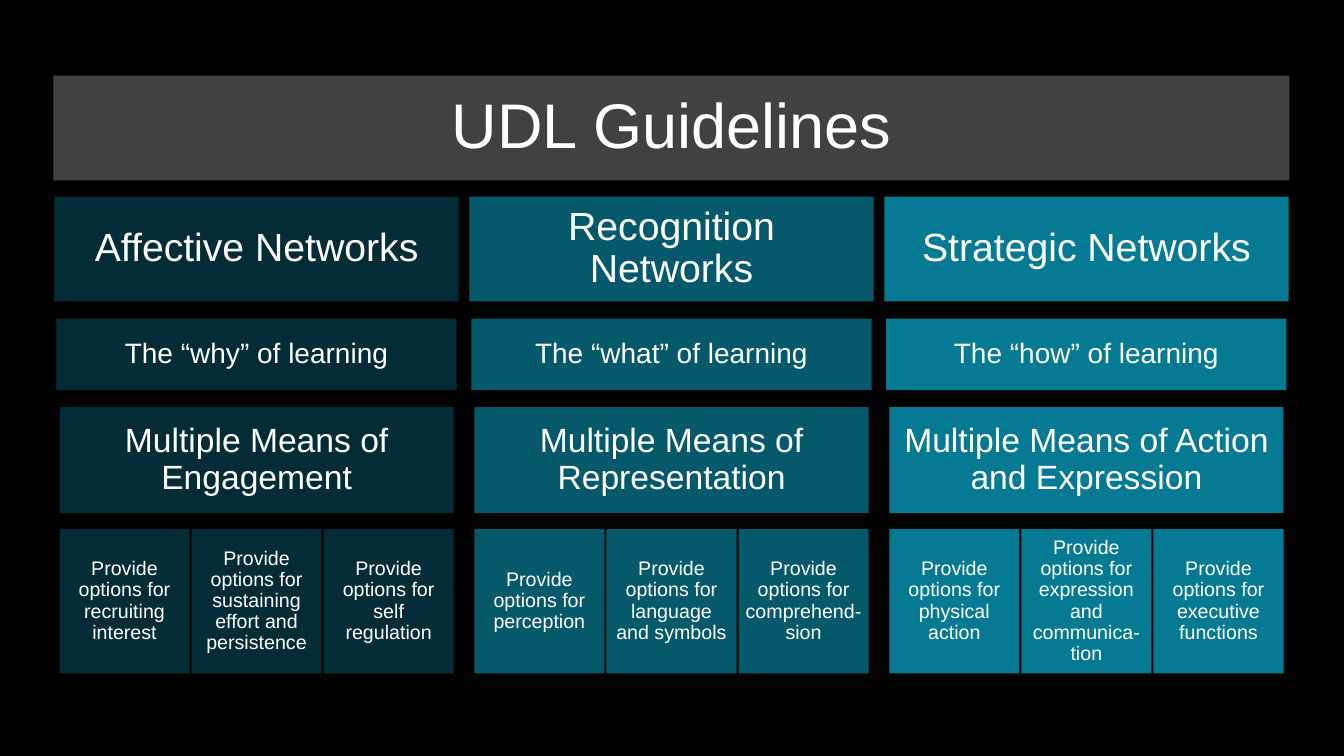
from pptx import Presentation
from pptx.dml.color import RGBColor
from pptx.enum.shapes import MSO_SHAPE as Shape
from pptx.enum.text import MSO_ANCHOR as Anchor, PP_ALIGN as Align
from pptx.util import Inches, Pt

NETWORKS = [
    ("032C36", "Affective Networks", "The “why” of learning",
     "Multiple Means of Engagement",
     ["Provide options for recruiting interest",
      "Provide options for sustaining effort and persistence",
      "Provide options for self regulation"]),
    ("06596B", "Recognition Networks", "The “what” of learning",
     "Multiple Means of Representation",
     ["Provide options for perception",
      "Provide options for language and symbols",
      "Provide options for comprehend-sion"]),
    ("077A93", "Strategic Networks", "The “how” of learning",
     "Multiple Means of Action and Expression",
     ["Provide options for physical action",
      "Provide options for expression and communica-tion",
      "Provide options for executive functions"]),
]


def color(hex_code):
    """Turn a hex string into a colour."""
    return RGBColor.from_string(hex_code)


def add_block(slide, box, text, fill, size, inset):
    """Draw a filled rectangle with centred white text."""
    block = slide.shapes.add_shape(Shape.RECTANGLE, *map(Inches, box))
    block.shadow.inherit = False
    block.fill.solid()
    block.fill.fore_color.rgb = color(fill)
    block.line.fill.background()
    frame = block.text_frame
    frame.word_wrap = True
    frame.vertical_anchor = Anchor.MIDDLE
    frame.margin_left = frame.margin_right = Inches(inset)
    frame.margin_top = frame.margin_bottom = Inches(inset)
    frame.text = text
    para = frame.paragraphs[0]
    para.alignment = Align.CENTER
    para.line_spacing = 0.9
    font = para.runs[0].font
    font.name = "Arial"
    font.size = Pt(size)
    font.color.rgb = color("FFFFFF")


def add_network(slide, box, network):
    """Stack one network's headings and its row of options in a column."""
    left, top, width, height = box
    fill, name, question, means, options = network
    rows = [
        (name, 0, 0, 1.04, 28, 0.12),
        (question, 0.02, 1.21, 0.71, 20, 0.08),
        (means, 0.05, 2.09, 1.05, 24, 0.1),
    ]
    for text, indent, offset, row_height, size, inset in rows:
        row = (left + indent, top + offset, width - 2 * indent, row_height)
        add_block(slide, row, text, fill, size, inset)

    indent, offset, gap = 0.05, 3.3, 0.02
    count = len(options)
    option_width = (width - 2 * indent - (count - 1) * gap) / count
    for index, option in enumerate(options):
        option_left = left + indent + index * (option_width + gap)
        cell = (option_left, top + offset, option_width, height - offset)
        add_block(slide, cell, option, fill, 14, 0.06)


def add_networks(slide, box):
    """Spread the network columns evenly over the box."""
    left, top, width, height = box
    column_width = 4.01
    pitch = (width - column_width) / (len(NETWORKS) - 1)
    for index, network in enumerate(NETWORKS):
        column = (left + index * pitch, top, column_width, height)
        add_network(slide, column, network)


def main():
    """Build the guidelines slide and save it."""
    deck = Presentation()
    deck.slide_width, deck.slide_height = Inches(13.33), Inches(7.5)
    slide = deck.slides.add_slide(deck.slide_layouts[6])
    slide.background.fill.solid()
    slide.background.fill.fore_color.rgb = color("020202")
    add_block(slide, (0.53, 0.75, 12.26, 1.04), "UDL Guidelines", "414141", 45, 0.19)
    add_networks(slide, (0.54, 1.95, 12.24, 4.73))
    deck.save("out.pptx")


if __name__ == "__main__":
    main()
